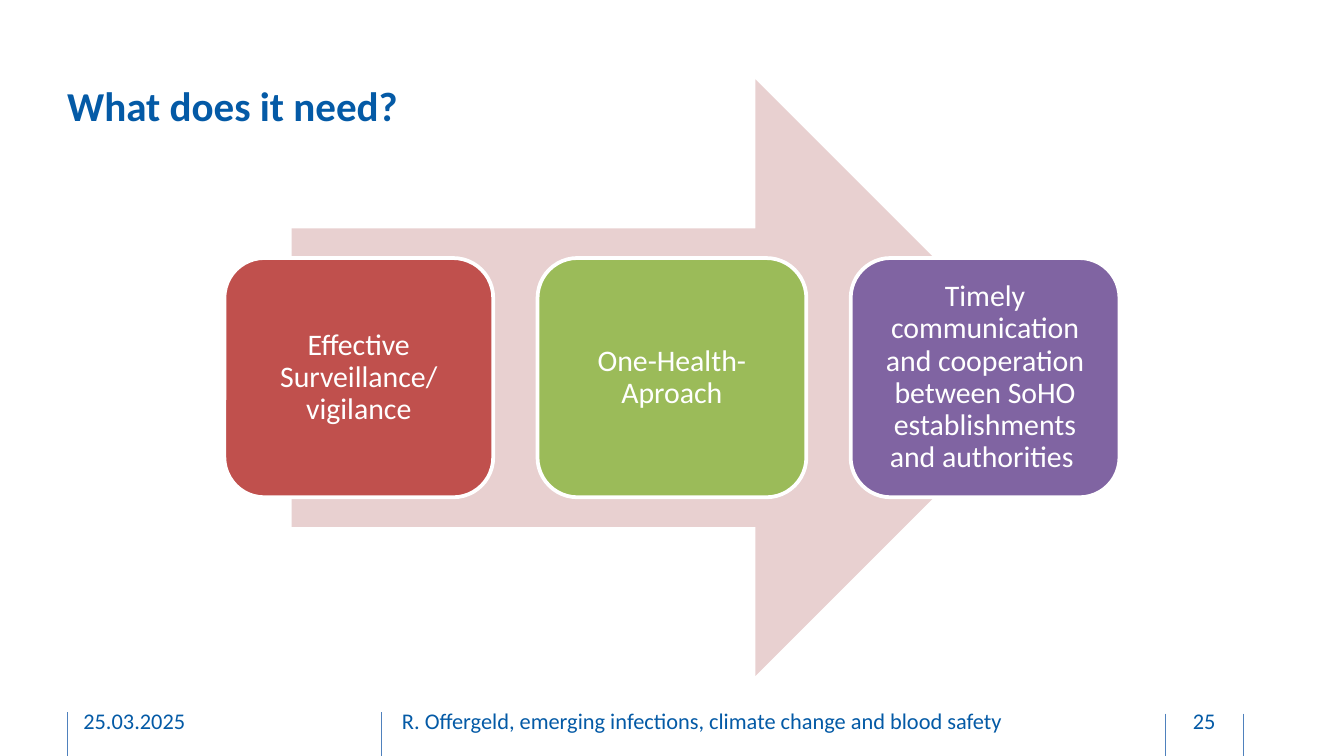
from lxml import etree
from pptx import Presentation
from pptx.dml.color import RGBColor
from pptx.enum.shapes import MSO_CONNECTOR, MSO_SHAPE
from pptx.enum.text import MSO_ANCHOR, PP_ALIGN
from pptx.oxml.ns import qn
from pptx.util import Inches, Pt

LEFT, CENTER = PP_ALIGN.LEFT, PP_ALIGN.CENTER
MIDDLE = MSO_ANCHOR.MIDDLE
STRAIGHT = MSO_CONNECTOR.STRAIGHT
RIGHT_ARROW, ROUNDED = MSO_SHAPE.RIGHT_ARROW, MSO_SHAPE.ROUNDED_RECTANGLE

COLORS = {
    "text": "045AA6",
    "divider": "4F81BD",
    "arrow": "E8D0D0",
    "red": "C0504D",
    "green": "9BBB59",
    "purple": "8064A2",
    "white": "FFFFFF",
}


def rgb(name):
    return RGBColor.from_string(COLORS[name])


def write_text(shape, text, size=12, color="text", bold=False, align=LEFT,
               line_spacing=1.0, inset_x=0, inset_y=0.05):
    frame = shape.text_frame
    frame.word_wrap = True
    frame.vertical_anchor = MIDDLE
    frame.margin_left = frame.margin_right = Inches(inset_x)
    frame.margin_top = frame.margin_bottom = Inches(inset_y)
    paragraph = frame.paragraphs[0]
    paragraph.alignment = align
    paragraph.line_spacing = line_spacing
    run = paragraph.add_run()
    run.text = text
    run.font.name = "Calibri"
    run.font.size = Pt(size)
    run.font.bold = bold
    run.font.color.rgb = rgb(color)


presentation = Presentation()
presentation.slide_width = Inches(10)
presentation.slide_height = Inches(10) * 9 // 16
slide = presentation.slides.add_slide(presentation.slide_layouts[6])
shapes = slide.shapes

# Footer dividers, running down to the slide's lower edge
for x, top in [(0.5, 5.3), (2.84, 5.3), (8.67, 5.31), (9.25, 5.31)]:
    divider = shapes.add_connector(
        STRAIGHT, Inches(x), Inches(top), Inches(x), presentation.slide_height)
    divider.line.color.rgb = rgb("divider")
    divider.line.width = Pt(0.5)
    etree.SubElement(divider._element.spPr, qn("a:effectLst"))

# Title
title = shapes.add_textbox(Inches(0.5), Inches(0.58), Inches(9.09), Inches(0.4))
write_text(title, "What does it need?", size=22, bold=True, inset_y=0)

# Arrow behind the three requirements
arrow = shapes.add_shape(
    RIGHT_ARROW, Inches(2.17), Inches(0.59), Inches(5.67), Inches(4.44))
arrow.shadow.inherit = False
arrow.fill.solid()
arrow.fill.fore_color.rgb = rgb("arrow")
arrow.line.fill.background()

requirements = [
    ("Effective Surveillance/ vigilance", "red"),
    ("One-Health-Aproach", "green"),
    ("Timely communication and cooperation between SoHO establishments "
     "and authorities ", "purple"),
]
CARD_LEFT, CARD_STEP = 1.67, 2.33
for index, (text, color) in enumerate(requirements):
    card = shapes.add_shape(
        ROUNDED, Inches(CARD_LEFT + index * CARD_STEP), Inches(1.92),
        Inches(2), Inches(1.78))
    card.shadow.inherit = False
    card.fill.solid()
    card.fill.fore_color.rgb = rgb(color)
    card.line.color.rgb = rgb("white")
    card.line.width = Pt(2)
    write_text(card, text, size=16, color="white", align=CENTER,
               line_spacing=0.9, inset_x=0.07, inset_y=0.07)

# Footer texts
footer = [
    (0.62, 2.03, "25.03.2025", LEFT),
    (2.99, 5.49, "R. Offergeld, emerging infections, climate change "
                 "and blood safety", LEFT),
    (8.69, 0.54, "25", CENTER),
]
for left, width, text, align in footer:
    box = shapes.add_textbox(Inches(left), Inches(5.21), Inches(width), Inches(0.3))
    write_text(box, text, align=align)

presentation.save("out.pptx")
